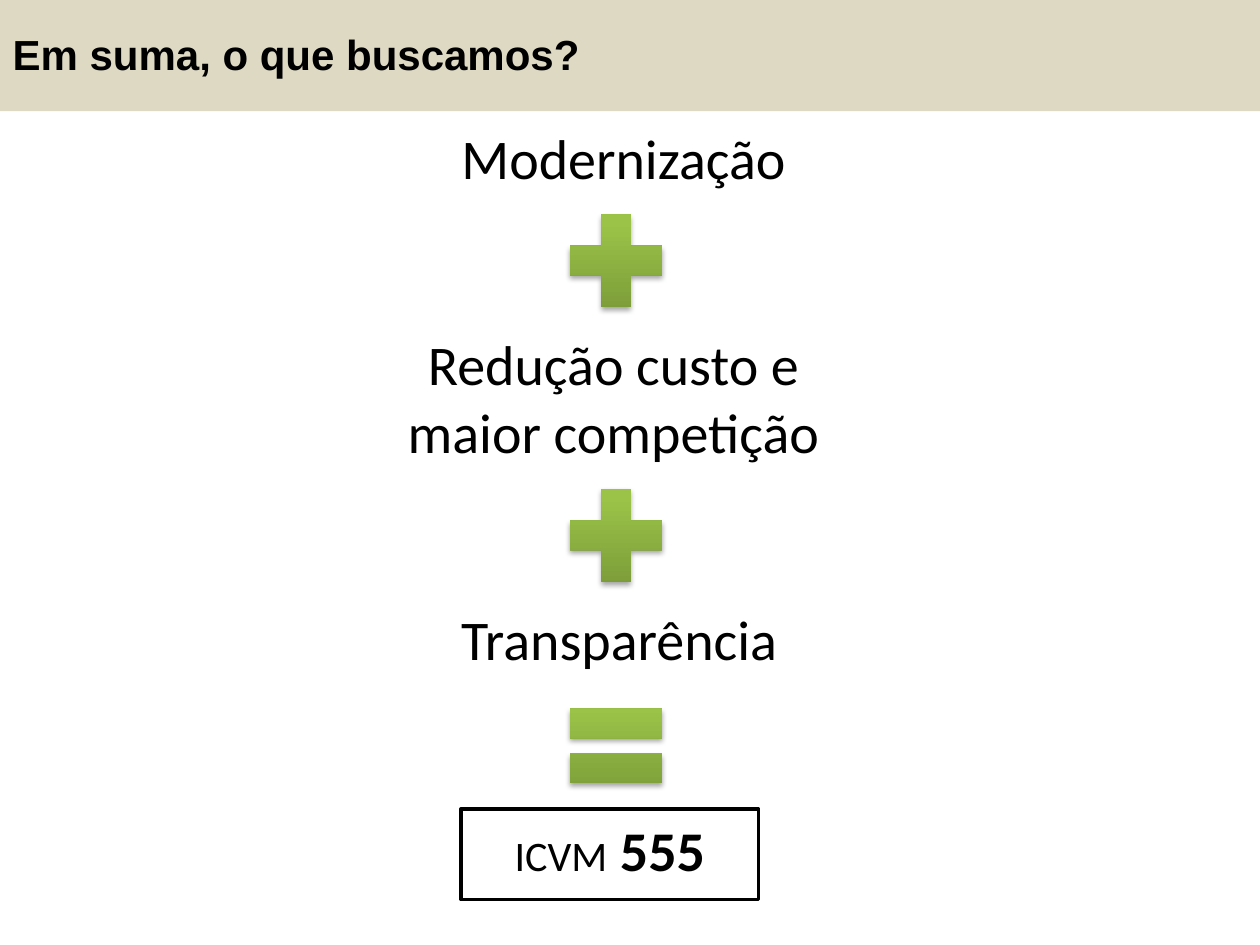
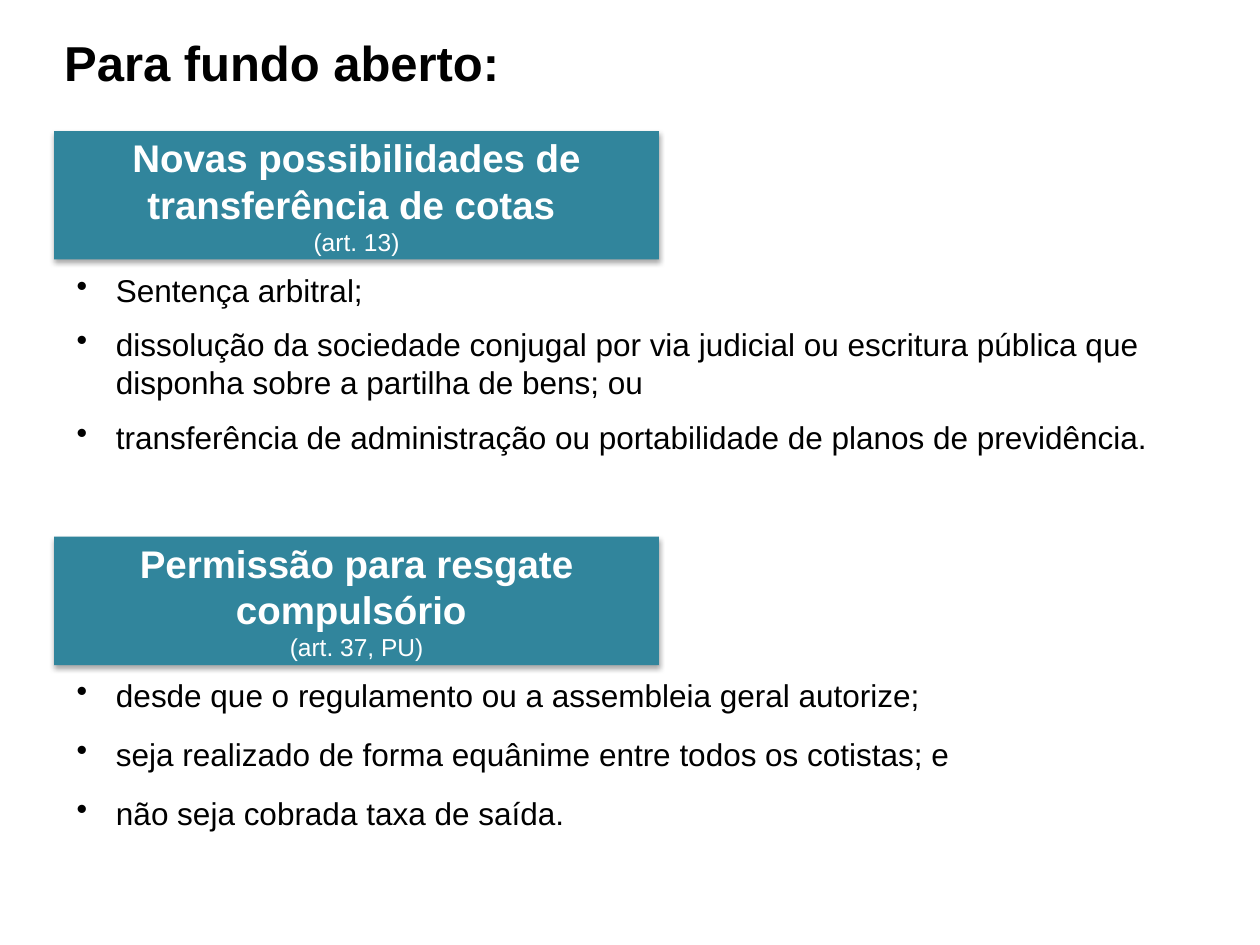
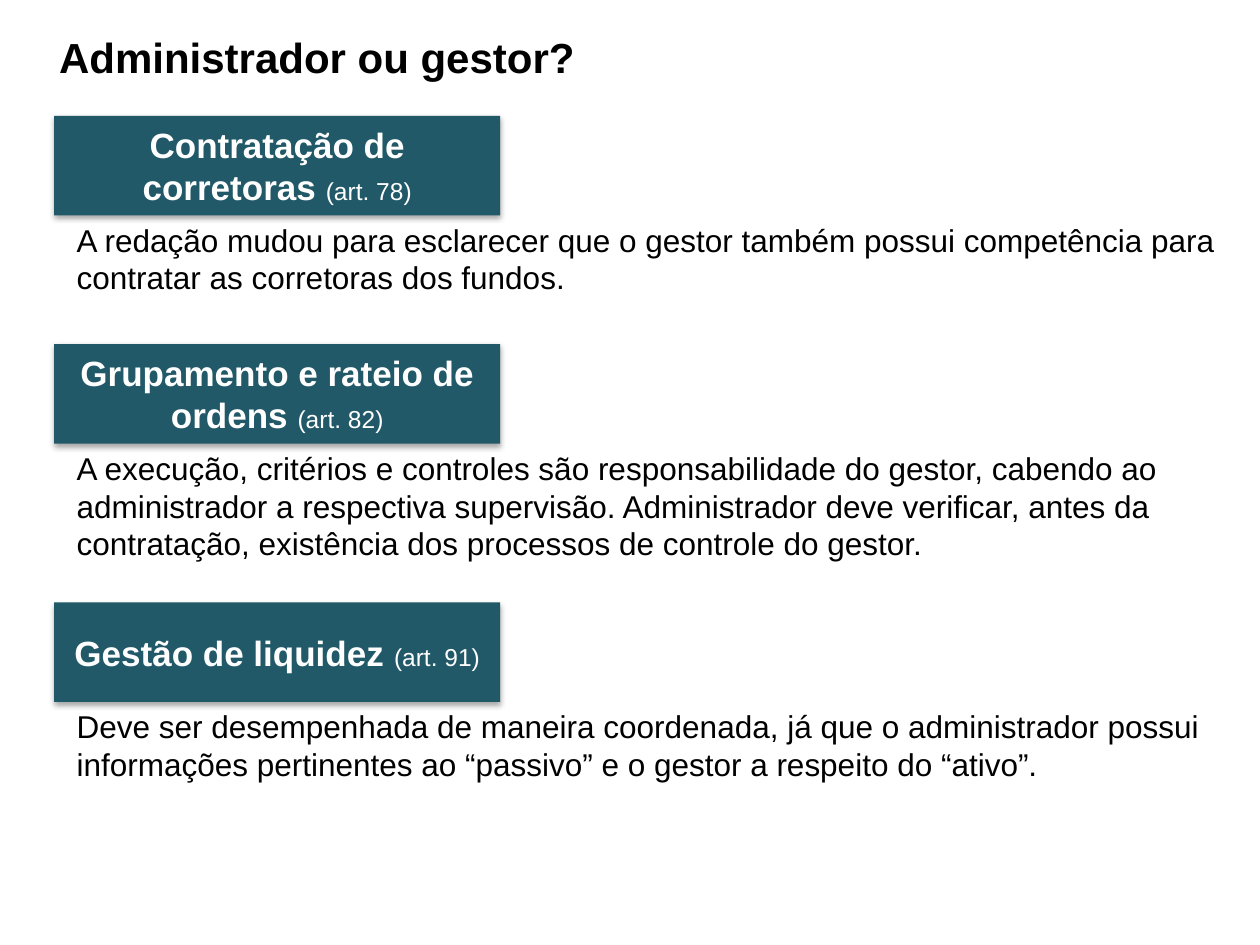
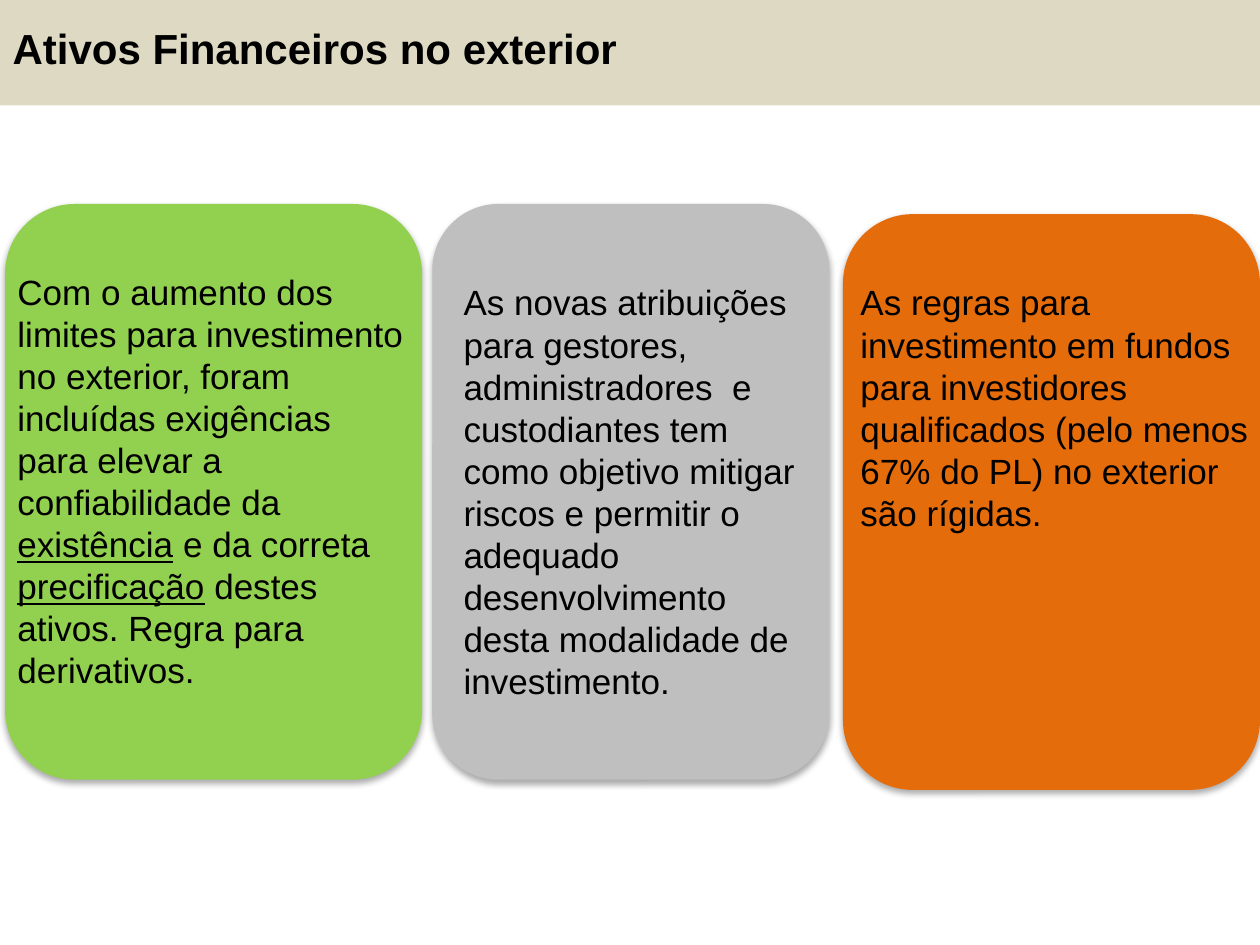
from copy import deepcopy

from lxml import etree
from pptx import Presentation
from pptx.dml.color import RGBColor
from pptx.enum.shapes import MSO_SHAPE
from pptx.enum.text import MSO_ANCHOR, MSO_AUTO_SIZE, PP_ALIGN
from pptx.oxml.ns import qn
from pptx.util import Pt

RECT = MSO_SHAPE.RECTANGLE
ROUND = MSO_SHAPE.ROUNDED_RECTANGLE
PLUS = MSO_SHAPE.MATH_PLUS
EQUAL = MSO_SHAPE.MATH_EQUAL
LEFT, CENTER = PP_ALIGN.LEFT, PP_ALIGN.CENTER
TOP, MIDDLE = MSO_ANCHOR.TOP, MSO_ANCHOR.MIDDLE
GROW, FIXED = MSO_AUTO_SIZE.SHAPE_TO_FIT_TEXT, MSO_AUTO_SIZE.NONE

HUES = {
    "ink": "000000",
    "paper": "FFFFFF",
    "band": "DDD9C3",
    "teal": "31859C",
    "deep": "215968",
    "lime": "92D050",
    "gray": "BFBFBF",
    "orange": "E46C0A",
    "moss": "779737",
    "leaf": "9BC348",
    "light": "9DC746",
}
RGB = {name: RGBColor.from_string(code) for name, code in HUES.items()}
BOLD, PLAIN, LINED = {"bold": True}, {"bold": False, "size": Pt(14)}, {"underline": True}


def write(shape, paras, size, hue="ink", face="Arial", side=LEFT):
    frame = shape.text_frame
    for index, runs in enumerate(paras):
        para = frame.add_paragraph() if index else frame.paragraphs[0]
        para.alignment = side
        para.font.name, para.font.size = face, Pt(size)
        para.font.color.rgb = RGB[hue]
        for text, marks in runs:
            run = para.add_run()
            run.text = text
            font = para.font if len(runs) == 1 else run.font
            for key, value in marks.items():
                setattr(font, key, value)
    return frame.paragraphs


def add(slide, kind, box, hue=None, shade=None):
    spots = [Pt(value) for value in box]
    if kind is None:
        shape = slide.shapes.add_textbox(*spots)
        shape.text_frame.word_wrap = True
        shape.text_frame.auto_size = GROW
        return shape
    shape = slide.shapes.add_shape(kind, *spots)
    shape.shadow.inherit = False
    shape.line.fill.background()
    if hue:
        shape.fill.solid()
        shape.fill.fore_color.rgb = RGB[hue]
    else:
        shape.fill.background()
    if shade:
        blur, gap, alpha = shade
        cast = etree.SubElement(
            shape._element.spPr.find(qn("a:effectLst")), qn("a:outerShdw"),
            blurRad=str(Pt(blur)), dist=str(Pt(gap)), dir="5400000", rotWithShape="0")
        tone = etree.SubElement(cast, qn("a:srgbClr"), val=HUES["ink"])
        etree.SubElement(tone, qn("a:alpha"), val=str(alpha * 1000))
    return shape


SOFT, WIDE = (3.1, 1.8, 35), (3.5, 2.2, 32)

deck = Presentation()
deck.slide_width, deck.slide_height = Pt(720), Pt(540)

titles = [
    ("Em suma, o que buscamos?", 24, (0, -2.4, 720, 66), True),
    ("Para fundo aberto:", 28, (29.5, 15.1, 266.4, 41), False),
    ("Administrador ou gestor?", 24, (26.6, 14.4, 311.8, 36), False),
    ("Ativos Financeiros no exterior", 24, (0, -5.8, 720, 66), True),
]
slides = []
for text, size, box, band in titles:
    slide = deck.slides.add_slide(deck.slide_layouts[5])
    title = slide.shapes.title
    title.left, title.top, title.width, title.height = [Pt(value) for value in box]
    frame = title.text_frame
    frame.word_wrap = band
    frame.auto_size = FIXED if band else GROW
    frame.vertical_anchor = MIDDLE if band else TOP
    if band:
        title.fill.solid()
        title.fill.fore_color.rgb = RGB["band"]
    write(title, [[(text, BOLD)]], size)
    slides.append(slide)
sums, funds, roles, assets = slides
sums_end = (263.5, 462.2, 170)

goals = [
    ((241.2, 67, 230.4, 46), [("Modernização", {})]),
    ((212.4, 185, 276.5, 85), [("Redução custo e maior competição", {})]),
    ((252, 342, 203.8, 46), [("Transparência", {})]),
    ((*sums_end, 46), [("ICVM", {"size": Pt(24)}), (" 555", BOLD)]),
]
for box, runs in goals:
    write(add(sums, None, box), [runs], 32, face="Calibri", side=CENTER)
for kind, top in [(PLUS, 113), (PLUS, 270), (EQUAL, 390.2)]:
    sign = add(sums, kind, (316.1, top, 72, 72), shade=SOFT)
    sign.fill.gradient()
    sign.fill.gradient_angle = 90
    stops = sign._element.spPr.find(".//" + qn("a:gsLst"))
    stops.append(deepcopy(stops[0]))
    for stop, (spot, hue) in zip(
            sign.fill.gradient_stops, [(0, "moss"), (0.8, "leaf"), (1, "light")]):
        stop.position = spot
        stop.color.rgb = RGB[hue]
frame_box = add(sums, RECT, (*sums_end, 51.8))
frame_box.line.color.rgb = RGB["ink"]
frame_box.line.width = Pt(2)

rules = [
    (74.9, 113.8, 9.6, "Novas possibilidades de transferência de cotas ", "(art. 13)", [
        "Sentença arbitral;",
        "dissolução da sociedade conjugal por via judicial ou escritura pública "
        "que disponha sobre a partilha de bens; ou",
        "transferência de administração ou portabilidade de planos de previdência.",
    ]),
    (306.7, 97.2, 12, "Permissão para resgate compulsório ", "(art. 37, PU)", [
        "desde que o regulamento ou a assembleia geral autorize;",
        "seja realizado de forma equânime entre todos os cotistas; e",
        "não seja cobrada taxa de saída.",
    ]),
]
for top, high, gap, name, note, items in rules:
    head = add(funds, RECT, (31, top, 345.6, 73.4), "teal", SOFT)
    write(head, [[(name, BOLD)], [(note, PLAIN)]], 22, "paper", side=CENTER)
    body = add(funds, None, (36.7, top + 76.3, 640.8, high))
    paras = write(body, [[(item, {})] for item in items], 18)
    for para in paras:
        props = para._p.get_or_add_pPr()
        props.set("marL", str(Pt(22.5)))
        props.set("indent", str(Pt(-22.5)))
        dot = etree.Element(qn("a:buChar"), char="•")
        props.find(qn("a:defRPr")).addprevious(dot)
    for para in paras[:-1]:
        para.space_after = Pt(gap)

duties = [
    (66.2, 51, "Contratação de corretoras ", "(art. 78)",
     "A redação mudou para esclarecer que o gestor também possui competência "
     "para contratar as corretoras dos fundos."),
    (196.6, 72.7, "Grupamento e rateio de ordens ", "(art. 82)",
     "A execução, critérios e controles são responsabilidade do gestor, cabendo "
     "ao administrador a respectiva supervisão. Administrador deve verificar, "
     "antes da contratação, existência dos processos de controle do gestor."),
    (344.2, 51, "Gestão de liquidez ", "(art. 91)",
     "Deve ser desempenhada de maneira coordenada, já que o administrador possui "
     "informações pertinentes ao “passivo” e o gestor a respeito do “ativo”."),
]
for top, high, name, note, text in duties:
    head = add(roles, RECT, (31, top, 254.9, 56.9), "deep", SOFT)
    write(head, [[(name, BOLD), (note, PLAIN)]], 20, "paper", side=CENTER)
    body = add(roles, None, (36.7, top + 56.3, 668.9, high))
    write(body, [[(text, {})]], 18)

cards = [
    ("lime", (2.9, 116.6, 238.3, 329), (2.9, 151.2, 238.3, 250), [
        ("Com o aumento dos limites para investimento no exterior, foram "
         "incluídas exigências para elevar a confiabilidade da ", {}),
        ("existência", LINED),
        (" e da correta ", {}),
        ("precificação", LINED),
        (" destes ativos. Regra para derivativos.", {}),
    ]),
    ("orange", (481.7, 122.4, 238.3, 329), (484.6, 157, 238.3, 152.6), [
        ("As regras para investimento em fundos para investidores qualificados "
         "(pelo menos 67% do PL) no exterior são rígidas.", {}),
    ]),
    ("gray", (247, 116.6, 226.8, 329), (257.8, 157, 206.6, 250), [
        ("As novas atribuições para gestores, administradores  e custodiantes "
         "tem como objetivo mitigar riscos e permitir o adequado "
         "desenvolvimento desta modalidade de investimento.", {}),
    ]),
]
for hue, box, spot, runs in cards:
    add(assets, ROUND, box, hue, WIDE)
    write(add(assets, None, spot), [runs], 20)

deck.save("out.pptx")
